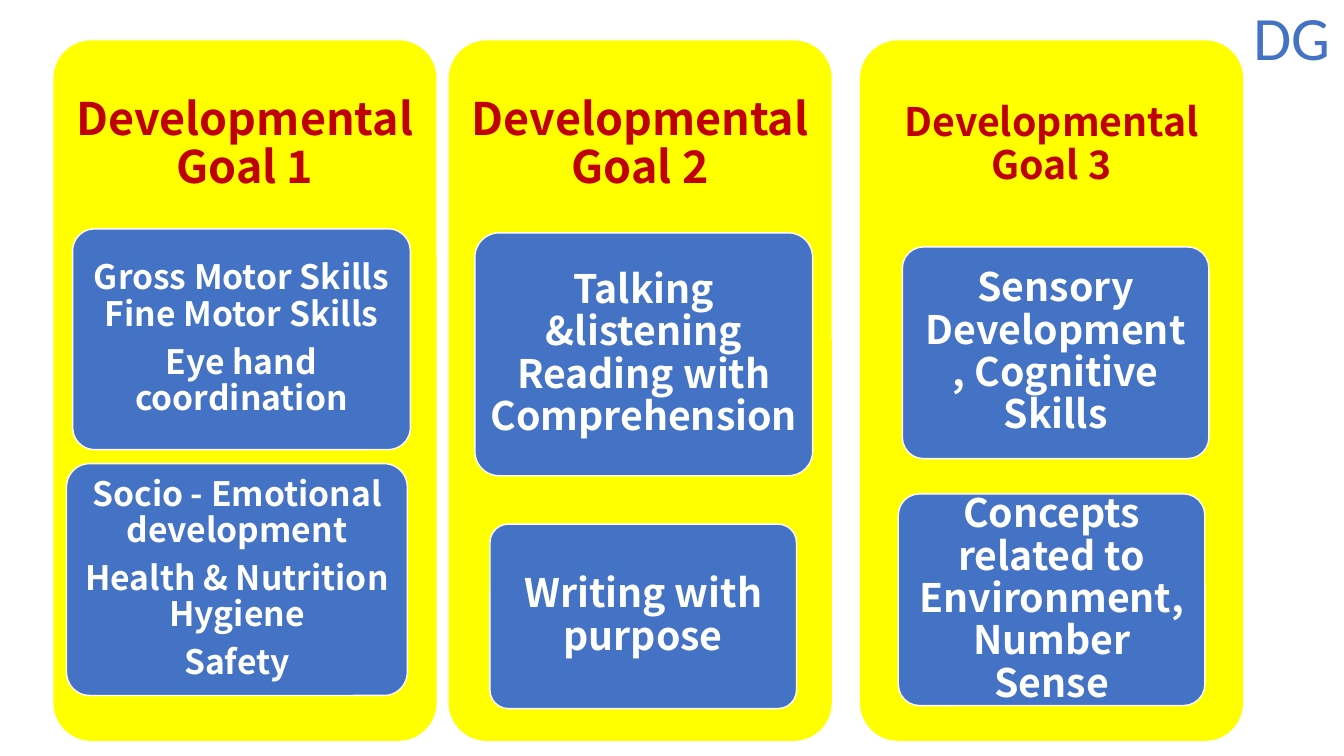
from pptx import Presentation
from pptx.dml.color import RGBColor
from pptx.enum.shapes import MSO_SHAPE
from pptx.enum.text import MSO_ANCHOR, PP_ALIGN
from pptx.util import Pt

ROUNDED = MSO_SHAPE.ROUNDED_RECTANGLE
MIDDLE = MSO_ANCHOR.MIDDLE
CENTER, LEFT = PP_ALIGN.CENTER, PP_ALIGN.LEFT
PX = 9144  # 100 px to the inch
COLORS = {"panel": "FFFF00", "card": "4472C4", "heading": "C00000", "white": "FFFFFF"}
FONT = "Noto Sans CJK KR"
PANEL_TOP, PANEL_W, PANEL_H, HEADING_H = 40, 380, 695, 208

# Each goal: panel left, heading, heading size, heading inset, card text size,
# card insets (side, top and bottom), cards as (box, paragraphs)
GOALS = [
    (53, "Developmental Goal 1", 32, 13, 24, (7, 5), [
        ((72, 227, 335, 219), ["Gross Motor Skills Fine Motor Skills", "Eye hand coordination"]),
        ((66, 460, 338, 230), ["Socio - Emotional development",
                               "Health & Nutrition Hygiene", "Safety"]),
    ]),
    (445, "Developmental Goal 2", 32, 13, 28, (8, 6), [
        ((471, 231, 335, 241), ["Talking &listening Reading with Comprehension"]),
        ((486, 520, 304, 183), ["Writing with purpose"]),
    ]),
    (853, "Developmental Goal 3", 28, 12, 28, (8, 6), [
        ((895, 245, 304, 210), ["Sensory Development , Cognitive Skills"]),
        ((891, 490, 304, 210), ["Concepts related to Environment, Number Sense"]),
    ]),
]


def color(name):
    return RGBColor.from_string(COLORS[name])


def emu(box):
    return [v * PX for v in box]


def write(sp, lines, size, name, insets, font=FONT, bold=True, align=CENTER):
    tf = sp.text_frame
    tf.text = "\n".join(lines)
    tf.word_wrap = True
    tf.vertical_anchor = MIDDLE
    tf.margin_left = tf.margin_right = insets[0] * PX
    tf.margin_top = tf.margin_bottom = insets[1] * PX
    for p in tf.paragraphs:
        p.alignment = align
        p.line_spacing = 0.9
        p.space_after = Pt(size * 0.35)
        for r in p.runs:
            r.font.name = font
            r.font.size = Pt(size)
            r.font.bold = bold
            r.font.color.rgb = color(name)


def add_rounded(slide, box, fill, outlined=False):
    sp = slide.shapes.add_shape(ROUNDED, *emu(box))
    sp.adjustments[0] = 0.1
    sp.shadow.inherit = False
    sp.fill.solid()
    sp.fill.fore_color.rgb = color(fill)
    if outlined:
        sp.line.color.rgb = color("white")
        sp.line.width = Pt(1)
    else:
        sp.line.fill.background()
    return sp


def add_goal(slide, left, heading, heading_size, inset, card_size, card_insets, cards):
    # Panel and its heading
    add_rounded(slide, (left, PANEL_TOP, PANEL_W, PANEL_H), "panel")
    tb = slide.shapes.add_textbox(*emu((left, PANEL_TOP, PANEL_W, HEADING_H)))
    write(tb, [heading], heading_size, "heading", (inset, inset))
    # Skill cards
    for box, lines in cards:
        card = add_rounded(slide, box, "card", outlined=True)
        write(card, lines, card_size, "white", card_insets)


def main():
    prs = Presentation()
    prs.slide_width, prs.slide_height = 1333 * PX, 750 * PX
    slide = prs.slides.add_slide(prs.slide_layouts[5])

    # Title
    title = slide.shapes.title
    title.left, title.top, title.width, title.height = emu((1233, 0, 98, 81))
    write(title, ["DG"], 44, "card", (10, 5), font="Calibri", bold=False, align=LEFT)

    # Three goal columns
    for goal in GOALS:
        add_goal(slide, *goal)

    prs.save("out.pptx")


if __name__ == "__main__":
    main()
